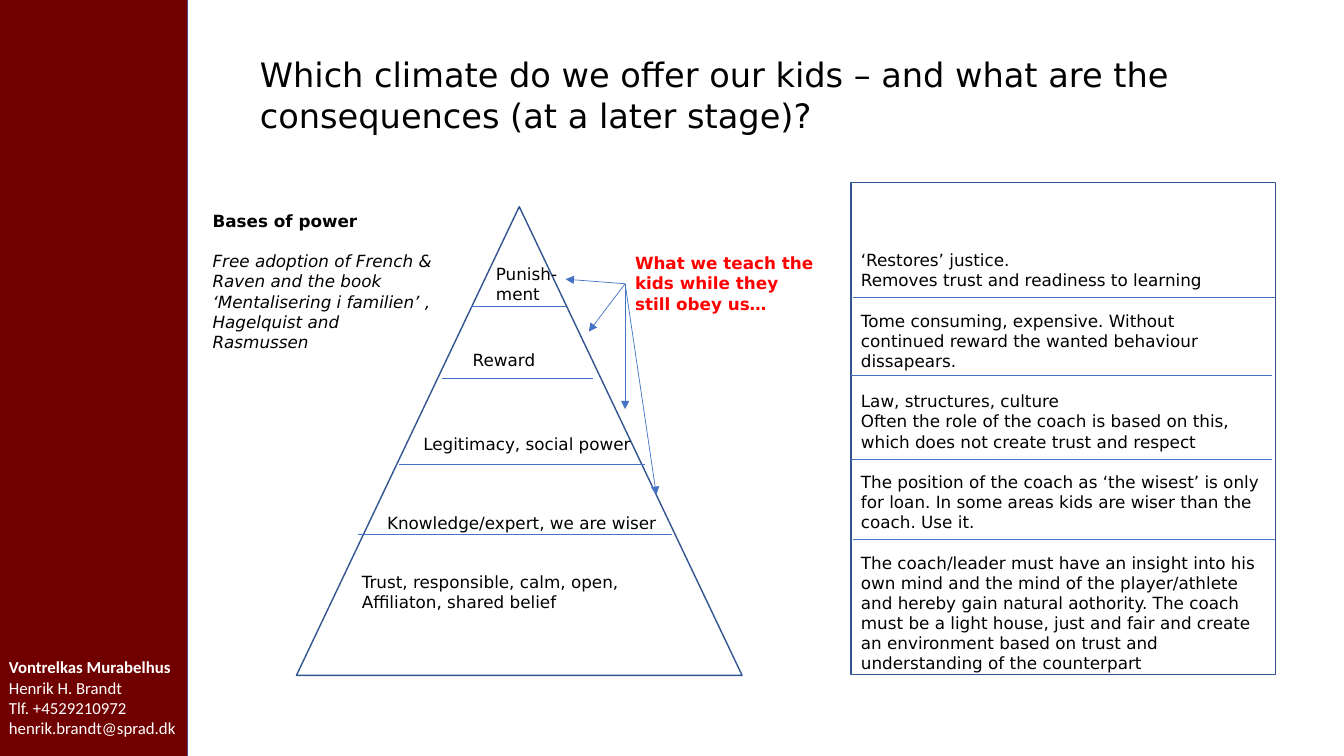
from lxml import etree
from pptx import Presentation
from pptx.dml.color import RGBColor
from pptx.enum.shapes import MSO_CONNECTOR, MSO_SHAPE
from pptx.oxml.ns import qn
from pptx.util import Inches, Pt

WHITE = RGBColor(0xFF, 0xFF, 0xFF)
BLACK = RGBColor(0, 0, 0)
RED = RGBColor(0xFF, 0, 0)
MAROON = RGBColor(0x70, 0, 0)
NAVY = RGBColor(0x32, 0x54, 0x91)
BLUE = RGBColor(0x44, 0x72, 0xC4)
STRAIGHT = MSO_CONNECTOR.STRAIGHT
RECT = MSO_SHAPE.RECTANGLE
TRIANGLE = MSO_SHAPE.ISOSCELES_TRIANGLE
SANS = "DejaVu Sans"
GAP = Pt(14.4)

CONTACT = ["Vontrelkas Murabelhus", "Henrik H. Brandt", "Tlf. +4529210972",
           "henrik.brandt@sprad.dk"]
TITLE = ("Which climate do we offer our kids – and what are the "
         "consequences (at a later stage)?")
SOURCE = ["Bases of power",
          "Free adoption of French & Raven and the book "
          "‘Mentalisering i familien’ , Hagelquist and Rasmussen"]
LEVELS = [
    (1.88, 0.52, 1.05, 0.5, ["Punish-ment"]),
    (1.65, 1.37, 1.05, 0.3, ["Reward"]),
    (1.16, 2.2, 2.3, 0.3, ["Legitimacy, social power"]),
    (0.8, 2.99, 3.32, 0.3, ["Knowledge/expert, we are wiser"]),
    (0.55, 3.57, 3.86, 0.5, ["Trust, responsible, calm, open,", "Affiliaton, shared belief"]),
]
STEPS = [(1.73, 2.67, 0.99), (1.44, 2.94, 1.7), (1.02, 3.46, 2.56), (0.61, 3.73, 3.25)]
EFFECTS = [
    ["‘Restores’ justice.", "Removes trust and readiness to learning"],
    ["Tome consuming, expensive. Without continued reward the wanted "
     "behaviour dissapears."],
    ["Law, structures, culture",
     "Often the role of the coach is based on this, which does not create "
     "trust and respect"],
    ["The position of the coach as ‘the wisest’ is only for loan. In some "
     "areas kids are wiser than the coach. Use it."],
    ["The coach/leader must have an insight into his own mind and the mind of "
     "the player/athlete and hereby gain natural aothority. The coach must be "
     "a light house, just and fair and create an environment based on trust "
     "and understanding of the counterpart"],
]
RULES = [(0.02, 4.21, 1.14), (0, 4.18, 1.91), (0, 4.18, 2.75), (0.02, 4.21, 3.54)]
LESSON = "What we teach the kids while they still obey us…"
TARGETS = [(-0.59, 0.31), (-0.36, 0.83), (0, 1.6), (0.31, 2.45)]


def add_text(slide, x, y, w, h, lines, size=12, color=BLACK, face=SANS):
    box = slide.shapes.add_textbox(Inches(x), Inches(y), Inches(w), Inches(h))
    frame = box.text_frame
    frame.word_wrap = True
    frame.text = "\n".join(lines)
    for para in frame.paragraphs:
        para.font.size = Pt(size)
        para.font.name = face
        para.font.color.rgb = color
    return box


def add_line(slide, x1, y1, x2, y2, arrow=False):
    line = slide.shapes.add_connector(
        STRAIGHT, Inches(x1), Inches(y1), Inches(x2), Inches(y2))
    line.line.color.rgb = BLUE
    line.line.width = Pt(0.5)
    if arrow:
        etree.SubElement(line.line._get_or_add_ln(), qn("a:tailEnd"), type="triangle")
    etree.SubElement(line._element.spPr, qn("a:effectLst"))
    return line


def add_form(slide, kind, x, y, w, h, fill=None):
    form = slide.shapes.add_shape(kind, Inches(x), Inches(y), Inches(w), Inches(h))
    form.shadow.inherit = False
    if fill is None:
        form.fill.background()
        form.line.color.rgb = NAVY
        form.line.width = Pt(1)
    else:
        form.fill.solid()
        form.fill.fore_color.rgb = fill
        form.line.fill.background()


def add_rules(slide, x, y, rules):
    for start, end, depth in rules:
        add_line(slide, x + start, y + depth, x + end, y + depth)


def add_sidebar(slide, x, y, w, h):
    add_line(slide, x + w, y, x + w, y + h)
    add_form(slide, RECT, x, y, w, h, MAROON)
    box = add_text(slide, x - 0.01, y + h - 1.03, w, 0.91, CONTACT,
                   color=WHITE, face="Calibri")
    box.text_frame.paragraphs[0].font.bold = True


def add_pyramid(slide, x, y, w, h):
    add_form(slide, TRIANGLE, x, y, w, h)
    add_rules(slide, x, y, STEPS)
    for left, top, width, height, lines in LEVELS:
        add_text(slide, x + left, y + top, width, height, lines)


def add_effects(slide, x, y, w, h):
    add_form(slide, RECT, x, y, w, h)
    add_rules(slide, x, y, RULES)
    box = add_text(slide, x, y + 0.62, w - 0.02, h - 0.33,
                   [line for group in EFFECTS for line in group])
    paras = iter(box.text_frame.paragraphs)
    for index, group in enumerate(EFFECTS):
        for row, _ in enumerate(group):
            para = next(paras)
            if index and row == 0:
                para.space_before = GAP


def add_source(slide, x, y, w, h):
    head, body = add_text(slide, x, y, w, h, SOURCE).text_frame.paragraphs
    head.font.bold = True
    body.font.italic = True
    body.space_before = GAP


def add_lesson(slide, x, y, w, h):
    box = add_text(slide, x, y, w, h, [LESSON], color=RED)
    box.text_frame.paragraphs[0].font.bold = True
    for dx, dy in TARGETS:
        arrow = add_line(slide, x, y + h / 2, x + dx, y + dy, True)
        arrow.begin_connect(box, 1)


def main():
    deck = Presentation()
    deck.slide_width = Inches(13.33)
    deck.slide_height = Inches(7.5)
    slide = deck.slides.add_slide(deck.slide_layouts[6])
    add_sidebar(slide, 0, 0, 1.86, 7.5)
    add_text(slide, 2.48, 0.49, 10.31, 0.91, [TITLE], size=24)
    add_pyramid(slide, 2.94, 2.05, 4.42, 4.65)
    add_effects(slide, 8.44, 1.81, 4.21, 4.88)
    add_source(slide, 2.01, 2.04, 2.44, 1.51)
    add_lesson(slide, 6.2, 2.46, 1.99, 0.71)
    deck.save("out.pptx")


if __name__ == "__main__":
    main()
